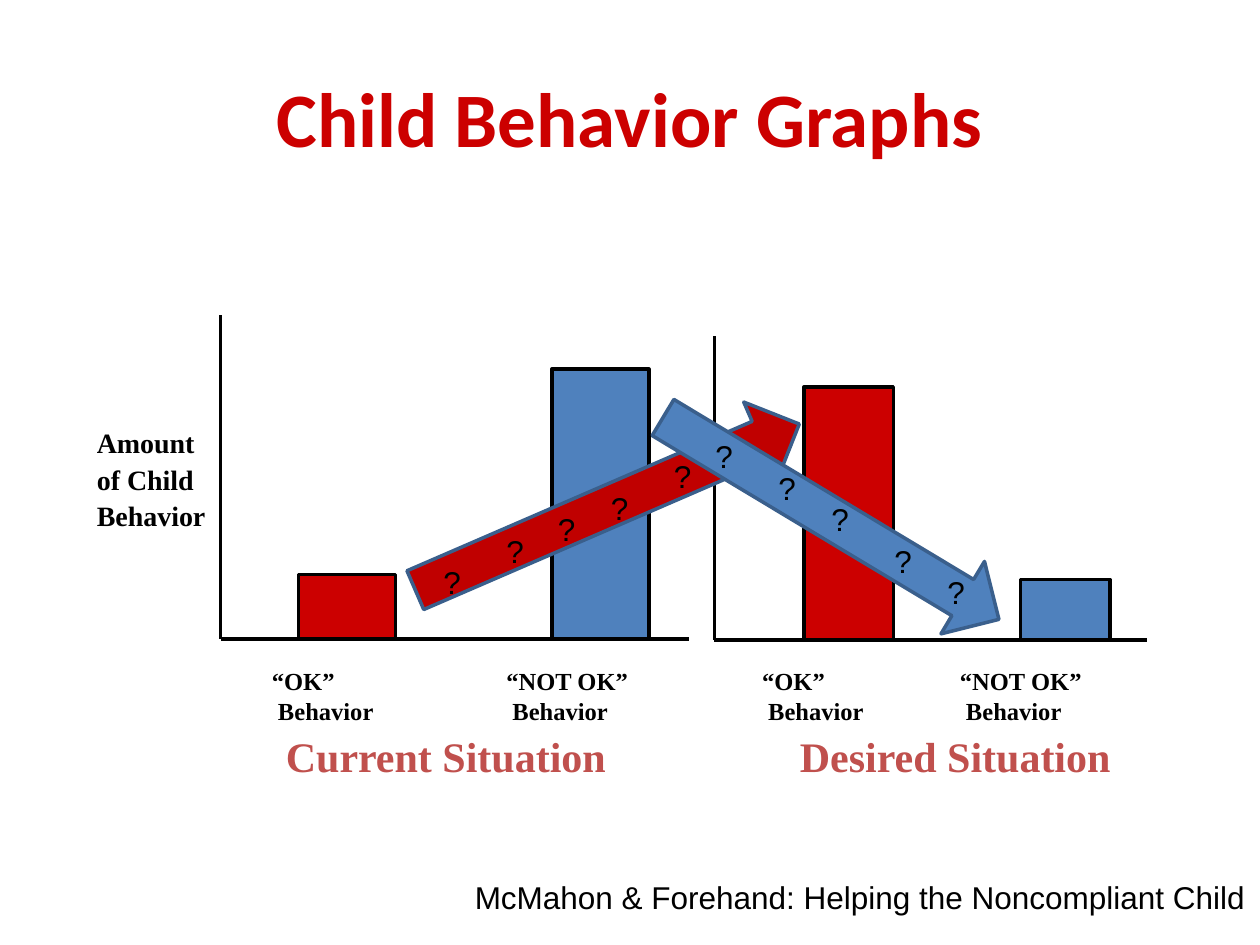
from lxml import etree
from pptx import Presentation
from pptx.dml.color import RGBColor
from pptx.enum import shapes, text
from pptx.oxml.ns import qn
from pptx.util import Inches, Pt

COLORS = {
    "title": "CC0000", "ok": "CC0000", "not_ok": "4F81BD", "caption": "C0504D",
    "rise": "C00000", "fall": "4F81BD", "arrow_line": "3A5F8C", "black": "000000",
}
SERIF = "Times New Roman"


def color(name):
    return RGBColor.from_string(COLORS[name])


def add_text(parent, box, lines, size, font, ink="black", bold=False,
             before=0, align=text.PP_ALIGN.LEFT, anchor=text.MSO_ANCHOR.TOP):
    frame = parent.add_textbox(*map(Inches, box)).text_frame
    frame.word_wrap = True
    frame.vertical_anchor = anchor
    for index, line in enumerate(lines):
        para = frame.add_paragraph() if index else frame.paragraphs[0]
        para.alignment = align
        para.space_before = Pt(before)
        span = para.add_run()
        span.text = line
        span.font.size, span.font.name, span.font.bold = Pt(size), font, bold
        span.font.color.rgb = color(ink)


def add_filled(parent, kind, box, fill, line, rotation=0):
    shape = parent.add_shape(kind, *map(Inches, box))
    shape.shadow.inherit = False
    shape.fill.solid()
    shape.fill.fore_color.rgb = color(fill)
    shape.line.color.rgb = color(line)
    shape.line.width = Pt(2)
    shape.rotation = rotation


def add_axis(parent, start, end):
    axis = parent.add_connector(shapes.MSO_CONNECTOR.STRAIGHT,
                                *map(Inches, start + end))
    axis.line.color.rgb = color("black")
    axis.line.width = Pt(2)
    etree.SubElement(axis._element.spPr, qn("a:effectLst"))


def add_graph(page, box, bar_width, bars, labels, caption, axis_title=None):
    """Draw axes, bars (offset, height, fill), labels and caption (offset, width, text)."""
    left, top, width, height = box
    base = top + height
    parent = page.shapes.add_group_shape().shapes
    if axis_title:
        add_text(parent, (left - 1.08, top + 0.83, 1.78, 0.95), axis_title,
                 16, SERIF, bold=True, before=1.6)
    add_axis(parent, (left, top), (left, base))
    add_axis(parent, (left, base), (left + width, base))
    for offset, bar_height, fill in bars:
        add_filled(parent, shapes.MSO_SHAPE.RECTANGLE,
                   (left + offset, base - bar_height, bar_width, bar_height),
                   fill, "black")
    for offset, label_width, name in labels:
        add_text(parent, (left + offset, 5.24, label_width, 0.57),
                 [name, " Behavior"], 14, SERIF, bold=True)
    offset, caption_width, words = caption
    add_text(parent, (left + offset, 5.75, caption_width, 0.5), [words],
             24, SERIF, "caption", bold=True)


def add_change_arrows(page, box):
    """Draw the crossing arrows and their question marks."""
    left, top = box[:2]
    parent = page.shapes.add_group_shape().shapes
    arrows = [((0, 0, 3.32, 0.67), "rise", 336.6),
              ((1.88, 0.09, 3.11, 0.67), "fall", 31)]
    for (x, y, width, height), fill, rotation in arrows:
        add_filled(parent, shapes.MSO_SHAPE.RIGHT_ARROW,
                   (left + x, top + y, width, height), fill, "arrow_line", rotation)
    rising = [(0.26, 0.73), (0.76, 0.48), (1.17, 0.31), (1.59, 0.14), (2.09, -0.11)]
    falling = [(2.42, -0.27), (2.92, -0.02), (3.34, 0.23), (3.84, 0.56), (4.26, 0.81)]
    for x, y in rising + falling:
        add_text(parent, (left + x, top + y, 0.33, 0.4), ["?"], 18, "Arial")


def main():
    deck = Presentation()
    deck.slide_width, deck.slide_height = Inches(10), Inches(7.5)
    page = deck.slides.add_slide(deck.slide_layouts[6])

    # Title
    add_text(page.shapes, (0.5, 0.3, 9, 1.25), ["Child Behavior Graphs"], 44,
             "Calibri", "title", bold=True, align=text.PP_ALIGN.CENTER,
             anchor=text.MSO_ANCHOR.MIDDLE)

    # Current and desired graphs
    add_graph(page, (1.75, 2.5, 3.72, 2.57), 0.77,
              [(0.62, 0.51, "ok"), (2.63, 2.14, "not_ok")],
              [(0.31, 2.17, "“OK”"), (2.17, 1.66, "“NOT OK”")],
              (0.42, 3.22, "Current Situation"),
              ["Amount", "of Child", "Behavior"])
    add_graph(page, (5.67, 2.67, 3.43, 2.41), 0.71,
              [(0.71, 2.01, "ok"), (2.43, 0.48, "not_ok")],
              [(0.28, 2, "“OK”"), (1.85, 2.14, "“NOT OK”")],
              (0.58, 3.35, "Desired Situation"))

    # Source line
    add_text(page.shapes, (3.67, 6.92, 6.33, 0.4),
             ["McMahon & Forehand: Helping the Noncompliant Child"], 18, "Arial")

    # Change between the graphs
    add_change_arrows(page, (3.16, 3.69, 4.99, 0.76))
    deck.save("out.pptx")


if __name__ == "__main__":
    main()
